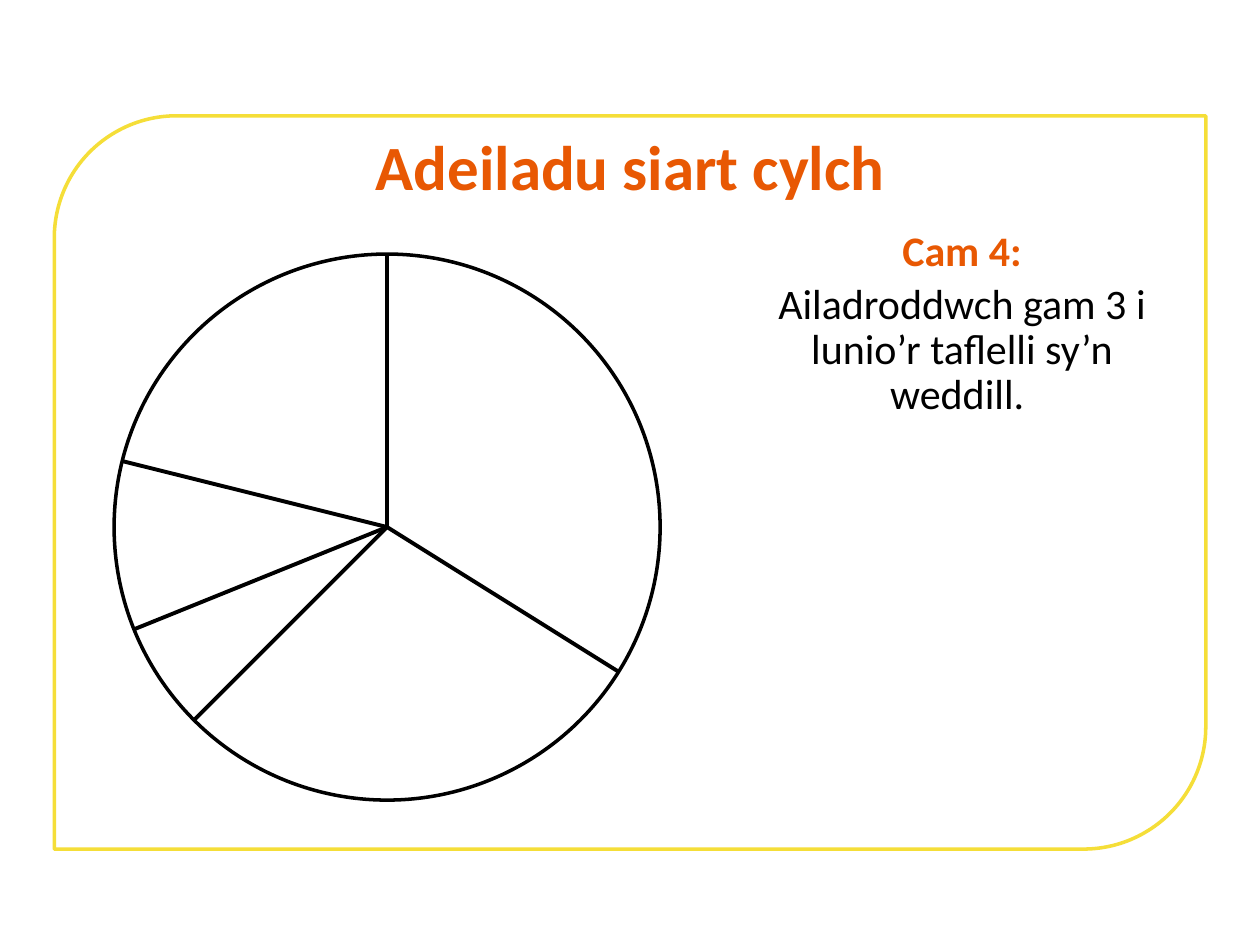
from math import cos, radians, sin
from lxml import etree
from pptx import Presentation
from pptx.dml.color import RGBColor
from pptx.enum import shapes, text
from pptx.oxml import ns
from pptx.util import Pt

WHITE = RGBColor(0xFF, 0xFF, 0xFF)
BLACK = RGBColor(0, 0, 0)
YELLOW = RGBColor(0xF5, 0xDE, 0x38)
ORANGE = RGBColor(0xE8, 0x58, 0x03)

deck = Presentation()
deck.slide_width, deck.slide_height = Pt(720), Pt(540)
slide = deck.slides.add_slide(deck.slide_layouts[6])
kinds = shapes.MSO_SHAPE

frame = slide.shapes.add_shape(
    kinds.ROUND_2_DIAG_RECTANGLE, Pt(31), Pt(66.2), Pt(658), Pt(419))
frame.fill.solid()
frame.fill.fore_color.rgb = WHITE

mid_x, mid_y, radius = 221.2, 301.2, 156
ring = slide.shapes.add_shape(
    kinds.OVAL, Pt(mid_x - radius), Pt(mid_y - radius), Pt(2 * radius), Pt(2 * radius))
ring.fill.background()

for shape, color in ((frame, YELLOW), (ring, BLACK)):
    shape.shadow.inherit = False
    shape.line.color.rgb = color
    shape.line.width = Pt(2)

angle = 0
for slice_deg in (122, 103, 23, 36, 76):
    turn = radians(angle)
    edge_x, edge_y = mid_x + radius * sin(turn), mid_y - radius * cos(turn)
    spoke = slide.shapes.add_connector(
        shapes.MSO_CONNECTOR.STRAIGHT, Pt(edge_x), Pt(edge_y), Pt(mid_x), Pt(mid_y))
    spoke.line.color.rgb = BLACK
    spoke.line.width = Pt(2.25)
    etree.SubElement(spoke._element.spPr, ns.qn("a:effectLst"))
    angle += slice_deg

head = {"name": "Calibri", "size": Pt(36), "bold": True}
step = {"name": "Calibri", "size": Pt(24), "bold": True}
body = {"name": "Calibri", "size": Pt(24), "bold": False}
boxes = (
    ((105, 66.2, 510.5, 57), text.MSO_ANCHOR.MIDDLE, 1,
     (("Adeiladu siart cylch", head, ORANGE),)),
    ((433.5, 128.2, 232.5, 335), text.MSO_ANCHOR.TOP, 0.9,
     (("Cam 4:", step, ORANGE),
      ("Ailadroddwch gam 3 i lunio’r taflelli sy’n weddill. ", body, BLACK))),
)
for place, anchor, gap, lines in boxes:
    block = slide.shapes.add_textbox(*map(Pt, place)).text_frame
    block.word_wrap = True
    block.vertical_anchor = anchor
    for row, (words, style, color) in enumerate(lines):
        para = block.add_paragraph() if row else block.paragraphs[0]
        para.alignment = text.PP_ALIGN.CENTER
        para.line_spacing = gap
        if row:
            para.space_before = Pt(4)
        run = para.add_run()
        run.text = words
        for key, value in style.items():
            setattr(run.font, key, value)
        run.font.color.rgb = color

deck.save("out.pptx")
